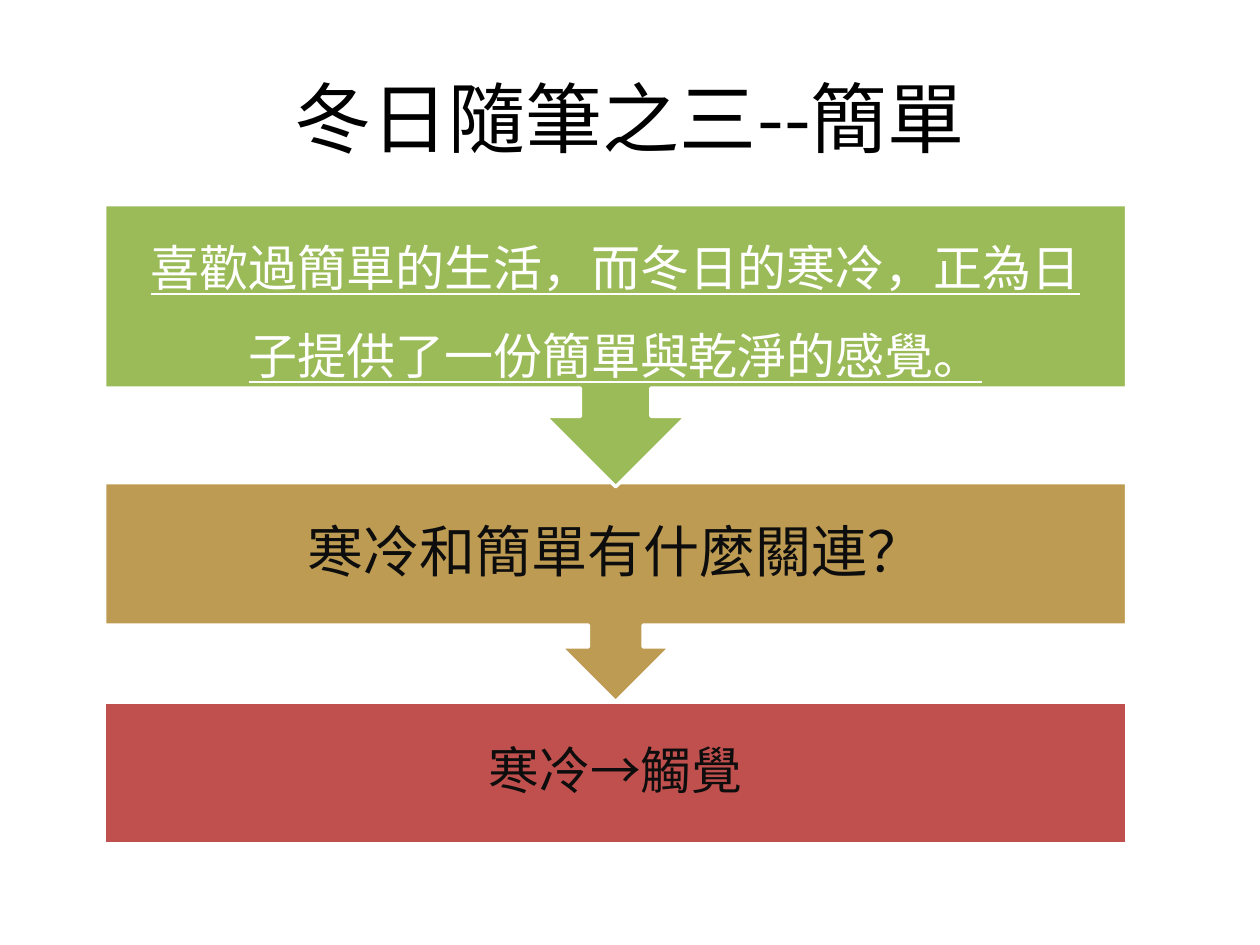
from pptx import Presentation
from pptx.dml.color import RGBColor
from pptx.enum.shapes import MSO_SHAPE
from pptx.enum.text import MSO_ANCHOR, PP_ALIGN
from pptx.oxml.ns import qn
from pptx.util import Pt
from lxml.etree import SubElement

FONT = "Noto Sans CJK SC"
BLACK = RGBColor(0x00, 0x00, 0x00)
INK = RGBColor(0x0D, 0x0D, 0x0D)
WHITE = RGBColor(0xFF, 0xFF, 0xFF)
RED = RGBColor(0xC0, 0x50, 0x4D)
GOLD = RGBColor(0xBD, 0x9B, 0x53)
GREEN = RGBColor(0x9B, 0xBB, 0x59)
LEFT, WIDE = 59.8, 584
BODY = 0.65


def add_run(para, text, size, color, under=None):
    run = para.add_run()
    run.text = text
    font = run.font
    font.name = FONT
    font.size = Pt(size)
    font.color.rgb = color
    font.underline = under
    east = SubElement(font._element, qn("a:ea"))
    east.set("typeface", FONT)
    font._element.find(qn("a:latin")).addnext(east)


def add_title(slide, text):
    title = slide.shapes.title
    title.left, title.top = Pt(36), Pt(21.6)
    title.width, title.height = Pt(648), Pt(90)
    frame = title.text_frame
    frame.vertical_anchor = MSO_ANCHOR.MIDDLE
    para = frame.paragraphs[0]
    para.alignment = PP_ALIGN.CENTER
    add_run(para, text, 44, BLACK)


def add_block(shapes, kind, top, high, fill, turn=0):
    block = shapes.add_shape(kind, Pt(LEFT), Pt(top), Pt(WIDE), Pt(high))
    block.rotation = turn
    block.shadow.inherit = False
    block.fill.solid()
    block.fill.fore_color.rgb = fill
    block.line.color.rgb = WHITE
    block.line.width = Pt(2)


def add_label(shapes, top, high, text, size, color, pad, space, under=None):
    box = shapes.add_textbox(Pt(LEFT), Pt(top), Pt(WIDE), Pt(high))
    frame = box.text_frame
    frame.word_wrap = True
    frame.vertical_anchor = MSO_ANCHOR.MIDDLE
    frame.margin_left = frame.margin_right = Pt(pad)
    frame.margin_top = frame.margin_bottom = Pt(pad)
    para = frame.paragraphs[0]
    para.alignment = PP_ALIGN.CENTER
    para.line_spacing = space
    para.space_after = Pt(size * 0.35)
    add_run(para, text, size, color, under)


def add_step(shapes, top, high, fill, *label):
    add_block(shapes, MSO_SHAPE.UP_ARROW_CALLOUT, top, high, fill, 180)
    add_label(shapes, top, high * BODY, *label)


def main():
    deck = Presentation()
    deck.slide_width, deck.slide_height = Pt(720), Pt(540)
    slide = deck.slides.add_slide(deck.slide_layouts[5])
    add_title(slide, "冬日隨筆之三--簡單")
    flow = slide.shapes.add_group_shape().shapes
    add_block(flow, MSO_SHAPE.RECTANGLE, 401.2, 81.2, RED)
    add_label(flow, 401.2, 81.2, "寒冷→觸覺", 29, INK, 16.5, 0.9)
    add_step(flow, 275.8, 125.2, GOLD, "寒冷和簡單有什麼關連？", 32, INK, 18, 0.9)
    add_step(flow, 117, 161.2, GREEN,
             "喜歡過簡單的生活，而冬日的寒冷，正為日子提供了一份簡單與乾淨的感覺。",
             28, WHITE, 15.8, 1.5, True)
    deck.save("out.pptx")


if __name__ == "__main__":
    main()
